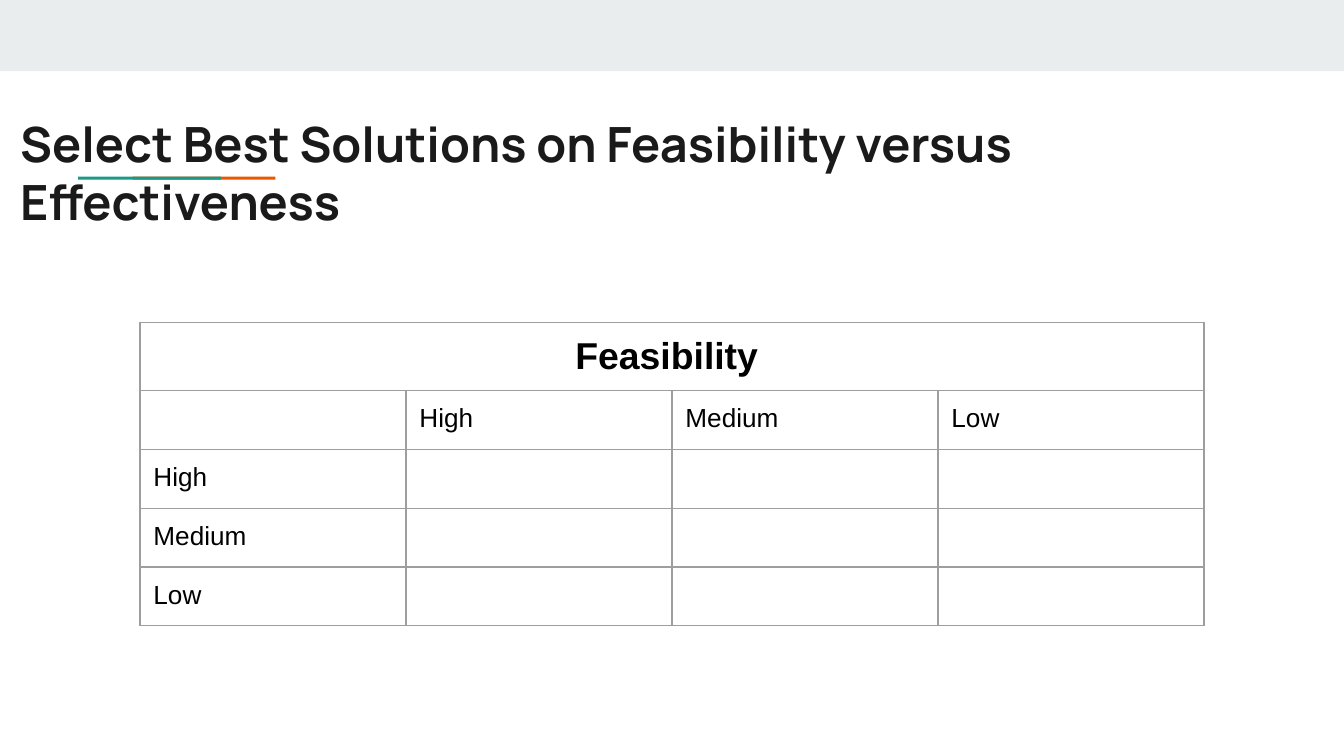
from lxml import etree
from pptx import Presentation
from pptx.dml.color import RGBColor
from pptx.enum import shapes, text
from pptx.oxml import ns
from pptx.util import Pt

WHITE = RGBColor(0xFF, 0xFF, 0xFF)
MIST = RGBColor(0xE9, 0xED, 0xEE)
ORANGE = RGBColor(0xEB, 0x56, 0x00)
TEAL = RGBColor(0x1A, 0x99, 0x88)
INK = RGBColor(0x1A, 0x1A, 0x1A)
BLACK = RGBColor(0, 0, 0)
GREY = RGBColor(0x9E, 0x9E, 0x9E)

LEVELS = ["High", "Medium", "Low"]


class Deck:
    title_font = dict(name="Manrope", size=Pt(26), bold=True)
    head_font = dict(name="Arial", size=Pt(20), bold=True)
    cell_font = dict(name="Arial", size=Pt(14), bold=False)
    inset = Pt(7.2)

    def __init__(self, width, height):
        self.prs = Presentation()
        self.prs.slide_width, self.prs.slide_height = Pt(width), Pt(height)
        self.s = self.prs.slides.add_slide(self.prs.slide_layouts[5])
        self.s.background.fill.solid()
        self.s.background.fill.fore_color.rgb = WHITE

    def add_words(self, p, words, style, color):
        r = p.add_run()
        r.text = words
        for name, value in style.items():
            setattr(r.font, name, value)
        r.font.color.rgb = color

    def pad(self, box):
        for side in ("left", "top", "right", "bottom"):
            setattr(box, f"margin_{side}", self.inset)

    def bar(self, left, top, width, height, color):
        sp = self.s.shapes.add_shape(
            shapes.MSO_SHAPE.RECTANGLE, *map(Pt, (left, top, width, height)))
        sp.shadow.inherit = False
        sp.fill.solid()
        sp.fill.fore_color.rgb = color
        sp.line.fill.background()

    def title(self, words, left, top, width, height):
        sp = self.s.shapes.title
        sp.left, sp.top, sp.width, sp.height = map(Pt, (left, top, width, height))
        # Keep the title in front of the bars
        self.s.shapes._spTree.append(sp._element)
        tf = sp.text_frame
        self.pad(tf)
        tf.word_wrap = True
        tf.auto_size = text.MSO_AUTO_SIZE.NONE
        tf.vertical_anchor = text.MSO_ANCHOR.TOP
        p = tf.paragraphs[0]
        p.alignment = text.PP_ALIGN.LEFT
        self.add_words(p, words, self.title_font, INK)

    def border(self, cell):
        """Outline all four sides of a cell; call before setting its fill."""
        props = cell._tc.get_or_add_tcPr()
        for side in ("a:lnL", "a:lnR", "a:lnT", "a:lnB"):
            ln = etree.SubElement(props, ns.qn(side), w=str(Pt(0.75)))
            fill = etree.SubElement(ln, ns.qn("a:solidFill"))
            etree.SubElement(fill, ns.qn("a:srgbClr"), val=str(GREY))

    def table(self, heading, rows, left, top, width, head_height, row_height):
        n_rows, n_cols = len(rows) + 1, len(rows[0])
        height = head_height + row_height * len(rows)
        table = self.s.shapes.add_table(
            n_rows, n_cols, *map(Pt, (left, top, width, height))).table
        table.first_row = table.horz_banding = False
        for i, row in enumerate(table.rows):
            row.height = Pt(row_height if i else head_height)
        for cell in table.iter_cells():
            self.pad(cell)
            self.border(cell)
            cell.fill.background()
        table.cell(0, 0).merge(table.cell(0, n_cols - 1))
        p = table.cell(0, 0).text_frame.paragraphs[0]
        p.alignment = text.PP_ALIGN.CENTER
        self.add_words(p, heading, self.head_font, BLACK)
        for i, row in enumerate(rows, 1):
            for j, words in enumerate(row):
                p = table.cell(i, j).text_frame.paragraphs[0]
                if words:
                    self.add_words(p, words, self.cell_font, BLACK)
                else:
                    # An empty cell must not stretch its row
                    etree.SubElement(p._p, ns.qn("a:endParaRPr"), sz="1400")


def main():
    deck = Deck(720, 405)
    deck.bar(0, 0, 720, 38.2, MIST)
    for left, color in ((71, ORANGE), (41.8, TEAL)):
        deck.bar(left, 94.7, 76.5, 1.6, color)
    deck.title("Select Best Solutions on Feasibility versus Effectiveness",
               3.6, 54, 714.2, 97.9)
    rows = [["", *LEVELS]] + [[level, "", "", ""] for level in LEVELS]
    deck.table("Feasibility ", rows, 75, 172.6, 570, 36.6, 30.24)
    deck.prs.save("out.pptx")


if __name__ == "__main__":
    main()
